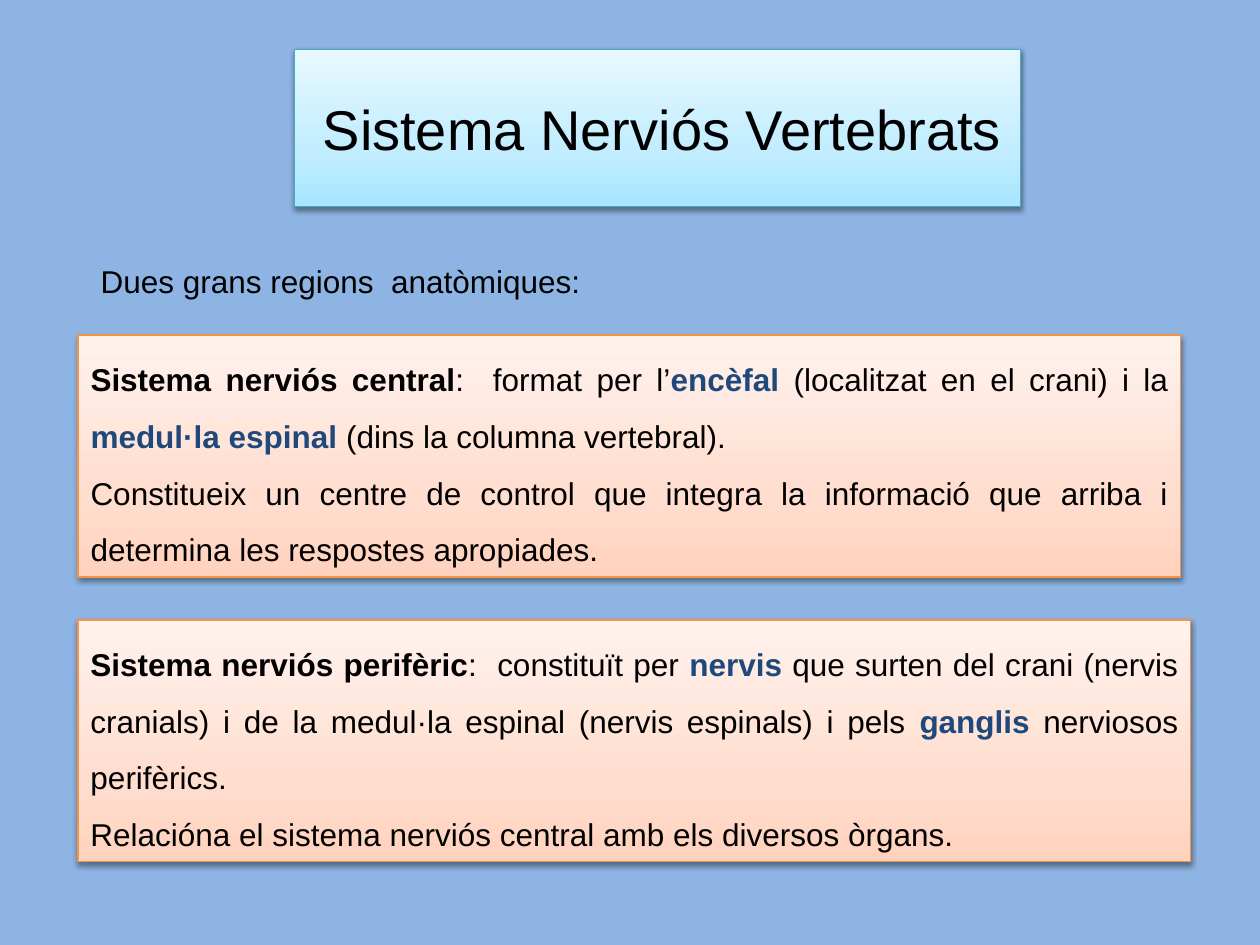
from typing import NamedTuple

from lxml import etree
from pptx import Presentation
from pptx import util as u
from pptx.dml.color import RGBColor
from pptx.enum import shapes, text
from pptx.oxml.ns import qn

# Grid of 100 columns by 75 rows
COLUMNS, ROWS = 100, 75
SLIDE_W, SLIDE_H = u.Inches(10), u.Inches(7.5)

BACKGROUND = RGBColor(0x8E, 0xB4, 0xE3)
BLACK = RGBColor(0x00, 0x00, 0x00)
NAVY = RGBColor(0x1F, 0x49, 0x7D)
TEAL = RGBColor(0x46, 0xAA, 0xC5)
ORANGE = RGBColor(0xF6, 0x92, 0x40)
SKY = (RGBColor(0xA7, 0xE6, 0xFF), RGBColor(0xC1, 0xED, 0xFF), RGBColor(0xE7, 0xF8, 0xFF))
PEACH = (RGBColor(0xFF, 0xD2, 0xBD), RGBColor(0xFF, 0xDE, 0xD0), RGBColor(0xFF, 0xF2, 0xED))
STOPS = (0, 35, 100)


class Area(NamedTuple):
    column: float
    row: float
    columns: float
    rows: float

    def lengths(self) -> tuple[int, int, int, int]:
        return (int(SLIDE_W * self.column / COLUMNS), int(SLIDE_H * self.row / ROWS),
                int(SLIDE_W * self.columns / COLUMNS), int(SLIDE_H * self.rows / ROWS))


class Words(NamedTuple):
    wording: str
    bold: bool = False
    color: RGBColor = BLACK


class Panel(NamedTuple):
    area: Area
    tints: tuple
    border: RGBColor
    paragraphs: list
    size: int = 18
    spacing: float = 1.5
    anchor: text.MSO_ANCHOR = text.MSO_ANCHOR.TOP
    autosize: text.MSO_AUTO_SIZE = text.MSO_AUTO_SIZE.SHAPE_TO_FIT_TEXT


def key_term(wording: str) -> Words:
    return Words(wording, True, NAVY)


def write(frame, paragraphs: list, size: int, spacing: float = 1.0) -> None:
    """Fill a text frame with justified paragraphs."""
    frame.word_wrap = True
    for index, pieces in enumerate(paragraphs):
        paragraph = frame.paragraphs[0] if index == 0 else frame.add_paragraph()
        paragraph.alignment = text.PP_ALIGN.JUSTIFY
        paragraph.line_spacing = spacing
        paragraph.font.size = u.Pt(size)
        paragraph.font.name = "Arial"
        for piece in pieces:
            run = paragraph.add_run()
            run.text = piece.wording
            run.font.bold = piece.bold
            run.font.color.rgb = piece.color


def add_color(parent, color: RGBColor):
    return etree.SubElement(parent, qn("a:srgbClr"), val=str(color))


def shade(shape, tints: tuple) -> None:
    """Three-stop gradient, running from bottom to top."""
    shape.fill.gradient()
    shape.fill.gradient_angle = 90
    stop_list = shape._element.spPr.find(".//" + qn("a:gsLst"))
    for stop in list(stop_list):
        stop_list.remove(stop)
    for position, tint in zip(STOPS, tints):
        add_color(etree.SubElement(stop_list, qn("a:gs"), pos=str(position * 1000)), tint)


def cast_shadow(shape) -> None:
    """Soft shadow straight below the shape."""
    shape.shadow.inherit = False
    effects = shape._element.spPr.find(qn("a:effectLst"))
    shadow = etree.SubElement(effects, qn("a:outerShdw"), blurRad="40000", dist="20000",
                              dir="5400000", rotWithShape="0")
    etree.SubElement(add_color(shadow, BLACK), qn("a:alpha"), val="38000")


def draw_panel(slide, panel: Panel) -> None:
    box = slide.shapes.add_shape(shapes.MSO_SHAPE.RECTANGLE, *panel.area.lengths())
    shade(box, panel.tints)
    box.line.color.rgb = panel.border
    box.line.width = u.Pt(0.75)
    cast_shadow(box)
    box.text_frame.vertical_anchor = panel.anchor
    box.text_frame.auto_size = panel.autosize
    write(box.text_frame, panel.paragraphs, panel.size, panel.spacing)


def draw_label(slide, area: Area, wording: str) -> None:
    label = slide.shapes.add_textbox(*area.lengths())
    label.text_frame.auto_size = text.MSO_AUTO_SIZE.SHAPE_TO_FIT_TEXT
    write(label.text_frame, [[Words(wording)]], 18)


TITLE = Panel(Area(23.4, 3.9, 57.6, 12.5), SKY, TEAL, [[Words(" Sistema Nerviós Vertebrats")]],
              size=32, spacing=1.0, anchor=text.MSO_ANCHOR.MIDDLE,
              autosize=text.MSO_AUTO_SIZE.NONE)

CENTRAL = Panel(Area(6.2, 26.6, 87.5, 19.2), PEACH, ORANGE, [
    [Words("Sistema nerviós central", True), Words(":  format per l’"), key_term("encèfal "),
     Words("(localitzat en el crani) i la "), key_term("medul·la espinal "),
     Words("(dins la columna vertebral).")],
    [Words("Constitueix un centre de control que integra la informació que arriba i "
           "determina les respostes apropiades.")],
])

PERIPHERAL = Panel(Area(6.2, 49.2, 88.3, 19.2), PEACH, ORANGE, [
    [Words("Sistema nerviós perifèric", True), Words(":  constituït per "), key_term("nervis"),
     Words(" que surten del crani (nervis cranials) i de la medul·la espinal "
           "(nervis espinals) i pels "),
     key_term("ganglis"), Words(" nerviosos perifèrics.")],
    [Words("Relacióna el sistema nerviós central amb els diversos òrgans.")],
])


def main() -> None:
    deck = Presentation()
    deck.slide_width, deck.slide_height = SLIDE_W, SLIDE_H
    slide = deck.slides.add_slide(deck.slide_layouts[6])
    slide.background.fill.solid()
    slide.background.fill.fore_color.rgb = BACKGROUND

    # Title and introduction
    draw_panel(slide, TITLE)
    draw_label(slide, Area(7, 20.3, 87.5, 4), "Dues grans regions  anatòmiques:")

    # The two anatomical regions
    for region in (CENTRAL, PERIPHERAL):
        draw_panel(slide, region)

    deck.save("out.pptx")


if __name__ == "__main__":
    main()
